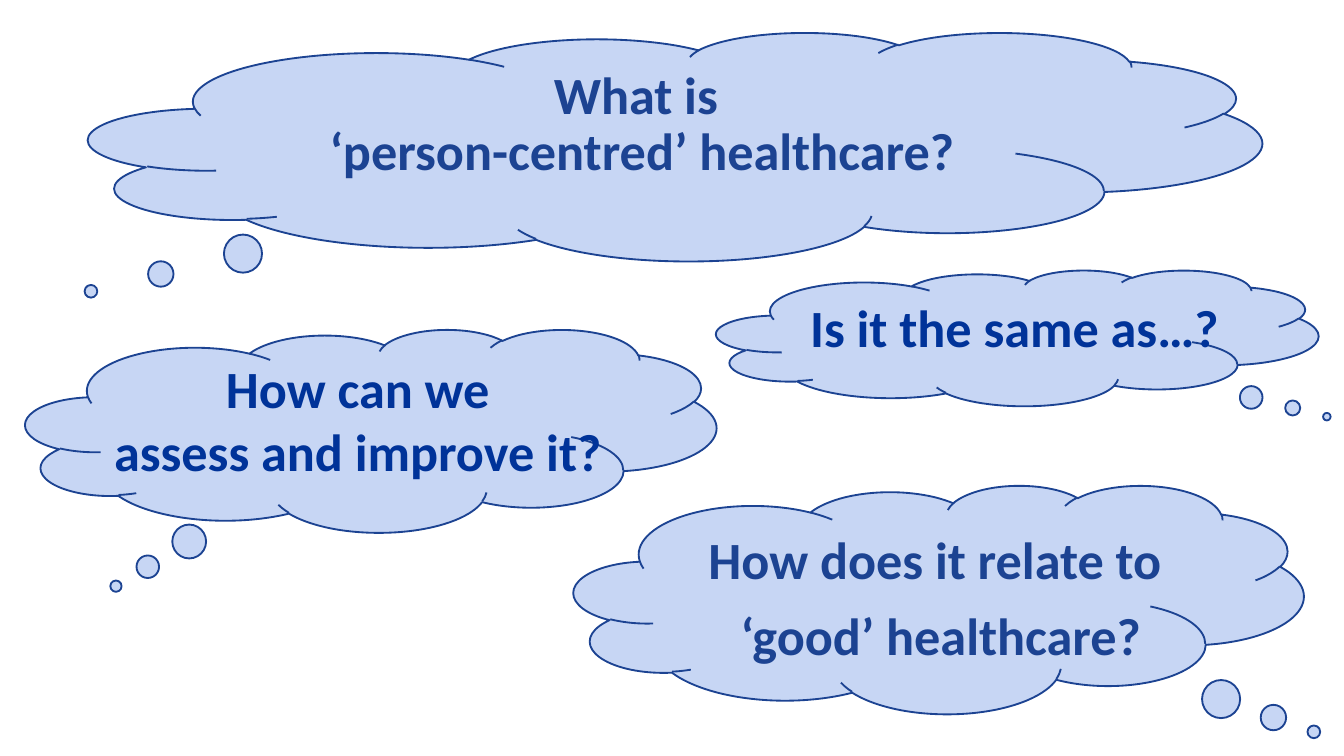
from pptx import Presentation
from pptx.dml.color import RGBColor
from pptx.enum.shapes import MSO_SHAPE
from pptx.enum.text import MSO_ANCHOR, PP_ALIGN
from pptx.util import Inches, Pt

CLOUD = MSO_SHAPE.CLOUD_CALLOUT
TOP, MIDDLE = MSO_ANCHOR.TOP, MSO_ANCHOR.MIDDLE
LEFT, CENTER = PP_ALIGN.LEFT, PP_ALIGN.CENTER

WIDTH = 10
HEIGHT = WIDTH * 9 / 16

THEME = {
    "font": "Calibri",
    "size": 28,
    "cloud": RGBColor(0xC7, 0xD6, 0xF4),
    "navy": RGBColor(0x1C, 0x43, 0x92),
    "blue": RGBColor(0x00, 0x33, 0x99),
}

# Content: each question has a cloud, its tail offset, a text box and a format.
# Boxes are left, top, width, height in inches; "\v" breaks a line.
QUESTIONS = [
    {"cloud": (0.19, 2.45, 5.14, 1.51), "tail": (-0.369, 0.766),
     "box": (0.5, 2.6, 4.41, 1.04),
     "lines": ["How can we ", "assess and improve it? "],
     "format": {"color": "blue"}},
    {"cloud": (0.66, 0.24, 8.73, 1.7), "tail": (-0.498, 0.634),
     "box": (0.82, 0.59, 7.91, 0.69),
     "lines": ["What is \v‘person-centred’ healthcare?"],
     "format": {"anchor": MIDDLE, "spacing": 0.9}},
    {"cloud": (4.27, 3.61, 5.43, 1.7), "tail": (0.514, 0.58),
     "box": (4.43, 3.93, 5.14, 1.2),
     "lines": ["How does it relate to ", "‘good’ healthcare?"],
     "format": {"spacing": 0.9, "gap": 10}},
    {"cloud": (5.33, 2.01, 4.48, 1.01), "tail": (0.514, 0.58),
     "box": (5.93, 2.15, 3.64, 0.57),
     "lines": ["Is it the same as…?"],
     "format": {"color": "blue", "align": LEFT}},
]


def add_cloud(s, box, tail):
    sp = s.shapes.add_shape(CLOUD, *map(Inches, box))
    sp.shadow.inherit = False
    for i, offset in enumerate(tail):
        sp.adjustments[i] = offset
    sp.fill.solid()
    sp.fill.fore_color.rgb = THEME["cloud"]
    sp.line.color.rgb = THEME["navy"]
    sp.line.width = Pt(1)


def add_text(s, box, lines, color="navy", align=CENTER, anchor=TOP,
             spacing=1.0, gap=0):
    tf = s.shapes.add_textbox(*map(Inches, box)).text_frame
    tf.word_wrap = True
    tf.vertical_anchor = anchor
    for i, line in enumerate(lines):
        p = tf.add_paragraph() if i else tf.paragraphs[0]
        p.text = line
        p.alignment = align
        p.line_spacing = spacing
        p.space_before = Pt(gap if i else 0)
        for r in p.runs:
            r.font.name = THEME["font"]
            r.font.size = Pt(THEME["size"])
            r.font.bold = True
            r.font.color.rgb = THEME[color]


prs = Presentation()
prs.slide_width, prs.slide_height = Inches(WIDTH), Inches(HEIGHT)
s = prs.slides.add_slide(prs.slide_layouts[6])

# Thought clouds, each with its question on top
for q in QUESTIONS:
    add_cloud(s, q["cloud"], q["tail"])
    add_text(s, q["box"], q["lines"], **q["format"])

prs.save("out.pptx")
